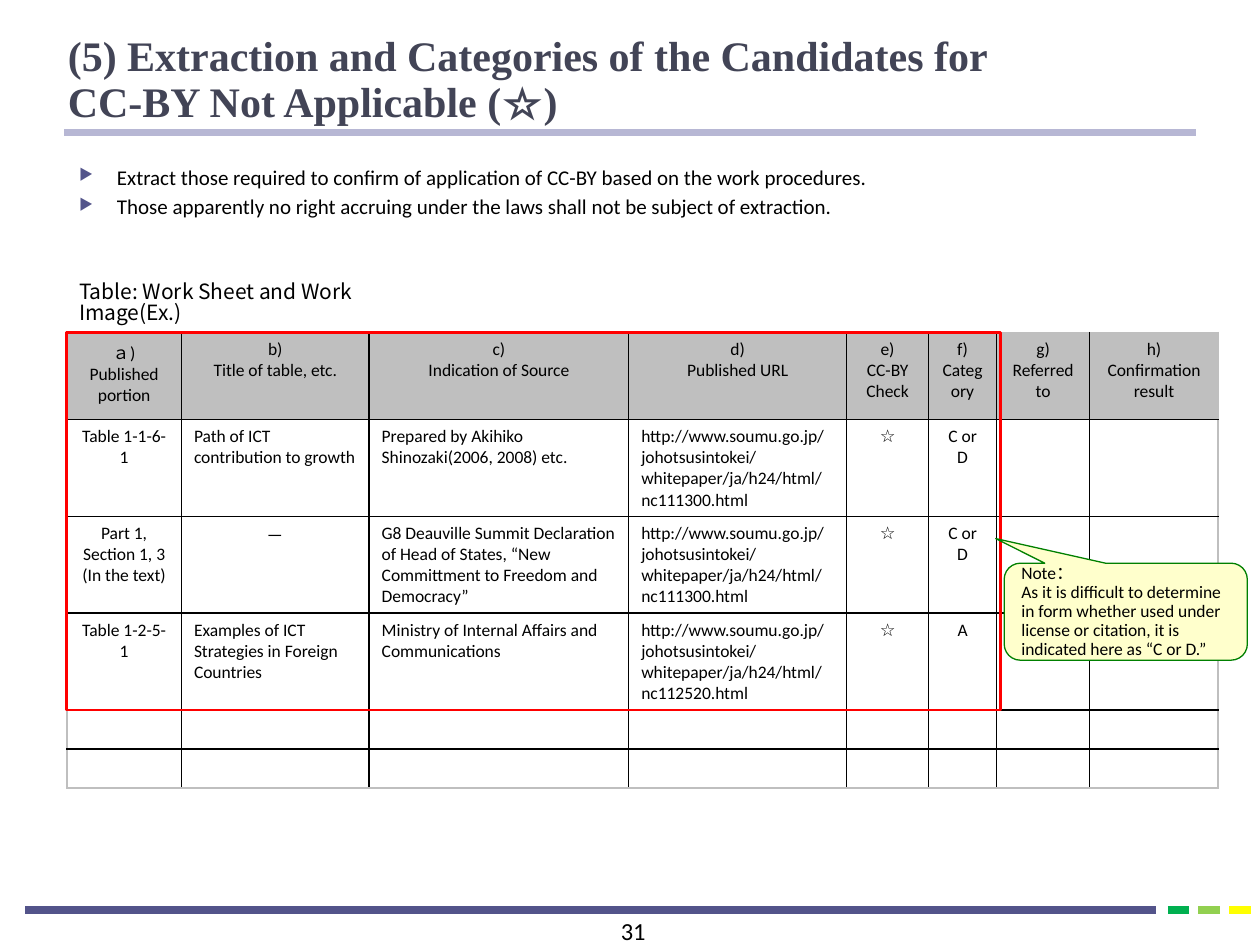
from dataclasses import dataclass

from lxml.etree import SubElement
from pptx import Presentation
from pptx.dml.color import RGBColor
from pptx.enum.shapes import MSO_CONNECTOR, MSO_SHAPE
from pptx.enum.text import MSO_ANCHOR, PP_ALIGN
from pptx.oxml.ns import qn
from pptx.util import Inches, Pt


@dataclass(frozen=True)
class Theme:
    """Colours, fonts and type sizes of the slide."""

    ink: str = "000000"
    title: str = "424456"
    accent: str = "53548A"
    rule: str = "B7B7D4"
    header: str = "BFBFBF"
    frame: str = "FF0000"
    note: str = "FFFFCC"
    note_line: str = "008000"
    dashes: tuple = ("00B050", "92D050", "FFFF00")
    body_font: str = "Calibri"
    title_font: str = "Times New Roman"
    caption_font: str = "Noto Sans CJK JP"
    title_size: int = 24
    number_size: int = 14
    body_size: int = 12
    cell_size: int = 10


@dataclass(frozen=True)
class Box:
    """A region in grid units, 100 columns by 75 rows to the slide."""

    left: float
    top: float
    width: float
    height: float

    def lengths(self):
        """Return the four lengths in slide units."""
        return [Inches(value / 10) for value in (self.left, self.top, self.width, self.height)]

    def share(self, x, y, width, height):
        """Return a sub-region given as shares of this one."""
        return Box(self.left + x * self.width, self.top + y * self.height,
                   width * self.width, height * self.height)


THEME = Theme()
COLUMNS = (0.91, 1.49, 2.06, 1.73, 0.65, 0.54, 0.74, 1.02)
ROWS = (0.69,) * 4 + (0.31,) * 2
LEFT_COLUMNS = (1, 2, 3)
URL = "http://www.soumu.go.jp/johotsusintokei/whitepaper/ja/h24/html/{}.html"
CELLS = (
    ("ａ)\nPublished portion", "b)\nTitle of table, etc.", "c)\nIndication of Source",
     "d)\nPublished URL", "e)\nCC-BY\nCheck", "f)\nCategory", "g)\nReferred to",
     "h)\nConfirmation result"),
    ("Table 1-1-6-1", "Path of ICT contribution to growth",
     "Prepared by Akihiko Shinozaki(2006, 2008) etc.", URL.format("nc111300"), "☆", "C or D", "", ""),
    ("Part 1, Section 1, 3\n(In the text)", "－",
     "G8 Deauville Summit Declaration of Head of States, “New Committment to Freedom and Democracy”",
     URL.format("nc111300"), "☆", "C or D", "", ""),
    ("Table 1-2-5-1", "Examples of ICT Strategies in Foreign Countries",
     "Ministry of Internal Affairs and Communications", URL.format("nc112520"), "☆", "A", "", ""),
    ("",) * 8,
    ("",) * 8,
)


def style(para, size, font=THEME.body_font, color=THEME.ink, bold=False):
    """Set the font of a whole paragraph."""
    para.font.size = Pt(size)
    para.font.name = font
    para.font.bold = bold
    para.font.color.rgb = RGBColor.from_string(color)


def add_text(page, box, text):
    """Place a wrapping text box and return its frame."""
    frame = page.shapes.add_textbox(*box.lengths()).text_frame
    frame.word_wrap = True
    frame.text = text
    return frame


def add_rule(page, box, color, weight):
    """Draw a horizontal line along the top of the box."""
    left, top, width, _ = box.lengths()
    line = page.shapes.add_connector(MSO_CONNECTOR.STRAIGHT, left, top, left + width, top)
    line.line.color.rgb = RGBColor.from_string(color)
    line.line.width = Pt(weight)
    SubElement(line._element.spPr, qn("a:effectLst"))


def add_bullet(para):
    """Give a paragraph a hanging triangle bullet."""
    props = para._p.get_or_add_pPr()
    props.set("marL", str(Inches(0.3)))
    props.set("indent", str(Inches(-0.3)))
    color = SubElement(props, qn("a:buClr"))
    SubElement(color, qn("a:srgbClr"), val=THEME.accent)
    SubElement(props, qn("a:buSzPct"), val="76000")
    SubElement(props, qn("a:buChar"), char="▶")


def add_border(cell, side, color):
    """Draw one edge of a table cell."""
    line = SubElement(cell._tc.get_or_add_tcPr(), qn(f"a:{side}"), w=str(Pt(1)))
    fill = SubElement(line, qn("a:solidFill"))
    SubElement(fill, qn("a:srgbClr"), val=color)


def add_title(page, box):
    """Place the title and the rule beneath it."""
    frame = add_text(page, box, "(5) Extraction and Categories of the Candidates for \vCC-BY Not Applicable (☆)")
    frame.vertical_anchor = MSO_ANCHOR.BOTTOM
    para = frame.paragraphs[0]
    para.line_spacing = 0.9
    style(para, THEME.title_size, THEME.title_font, THEME.title, True)
    add_rule(page, box.share(0.008, 1, 0.998, 0), THEME.rule, 4.25)


def add_points(page, box):
    """Place the bulleted points."""
    frame = add_text(page, box, "Extract those required to confirm of application of CC-BY based on the work procedures.\n"
                     "Those apparently no right accruing under the laws shall not be subject of extraction.")
    for index, para in enumerate(frame.paragraphs):
        para.line_spacing = Pt(14)
        para.space_before = Pt(3 if index else 0)
        add_bullet(para)
        style(para, THEME.body_size)


def add_caption(page, box):
    """Place the caption above the table."""
    para = add_text(page, box, "Table: Work Sheet and Work Image(Ex.)").paragraphs[0]
    para.line_spacing = 0.82
    style(para, THEME.body_size, THEME.caption_font)


def fill_cell(cell, text, row, column):
    """Write one cell with its borders and fill."""
    cell.text = text
    for para in cell.text_frame.paragraphs:
        left = row and column in LEFT_COLUMNS and text != "－"
        para.alignment = PP_ALIGN.LEFT if left else PP_ALIGN.CENTER
        style(para, THEME.cell_size)
    edges = {"lnL": column == 0, "lnR": column == len(COLUMNS) - 1,
             "lnT": row == 0, "lnB": row == len(ROWS) - 1}
    for side, outer in edges.items():
        add_border(cell, side, THEME.header if outer else THEME.ink)
    if row:
        cell.fill.background()
    else:
        cell.fill.solid()
        cell.fill.fore_color.rgb = RGBColor.from_string(THEME.header)


def add_sheet(page, box):
    """Place the work sheet table and the red frame over its filled rows."""
    table = page.shapes.add_table(len(ROWS), len(COLUMNS), *box.lengths()).table
    table.first_row = table.horz_banding = False
    for column, width in zip(table.columns, COLUMNS):
        column.width = Inches(width)
    for row, height in zip(table.rows, ROWS):
        row.height = Inches(height)
    for row, texts in enumerate(CELLS):
        for column, text in enumerate(texts):
            fill_cell(table.cell(row, column), text, row, column)
    frame = page.shapes.add_shape(MSO_SHAPE.RECTANGLE, *box.share(0, 0, 0.81, 0.83).lengths())
    frame.shadow.inherit = False
    frame.fill.background()
    frame.line.color.rgb = RGBColor.from_string(THEME.frame)
    frame.line.width = Pt(1.5)


def add_note(page, box):
    """Place the callout with its note."""
    note = page.shapes.add_shape(MSO_SHAPE.ROUNDED_RECTANGULAR_CALLOUT, *box.lengths())
    note.adjustments[0], note.adjustments[1] = -0.535, -0.754
    note.shadow.inherit = False
    note.fill.solid()
    note.fill.fore_color.rgb = RGBColor.from_string(THEME.note)
    note.line.color.rgb = RGBColor.from_string(THEME.note_line)
    note.line.width = Pt(0.75)
    frame = note.text_frame
    frame.word_wrap = True
    frame.vertical_anchor = MSO_ANCHOR.MIDDLE
    frame.text = ("Note：\vAs it is difficult to determine in form whether used under "
                  "license or citation, it is indicated here as “C or D.”")
    para = frame.paragraphs[0]
    para.alignment = PP_ALIGN.LEFT
    para.line_spacing = 0.9
    style(para, THEME.cell_size)


def add_footer(page, box):
    """Place the footer bar, its dashes and the page number."""
    add_rule(page, box.share(0, 0, 0.923, 0), THEME.accent, 4.5)
    for index, color in enumerate(THEME.dashes):
        add_rule(page, box.share(0.933 + 0.025 * index, 0, 0.0175, 0), color, 4.5)
    para = add_text(page, box.share(0.385, 0, 0.223, 1), "31").paragraphs[0]
    para.alignment = PP_ALIGN.CENTER
    style(para, THEME.number_size)


def main():
    """Build the slide and save the deck."""
    deck = Presentation()
    deck.slide_width, deck.slide_height = Inches(10), Inches(7.5)
    page = deck.slides.add_slide(deck.slide_layouts[6])
    add_footer(page, Box(2, 72.2, 97.2, 4))
    add_title(page, Box(4.4, 1.8, 90, 8.7))
    add_caption(page, Box(5.3, 22, 31.3, 3))
    add_sheet(page, Box(5.3, 26.4, 91.5, 36.1))
    add_note(page, Box(79.7, 44.7, 19.3, 7.7))
    add_points(page, Box(5.3, 12.6, 93.4, 5.8))
    deck.save("out.pptx")


if __name__ == "__main__":
    main()
